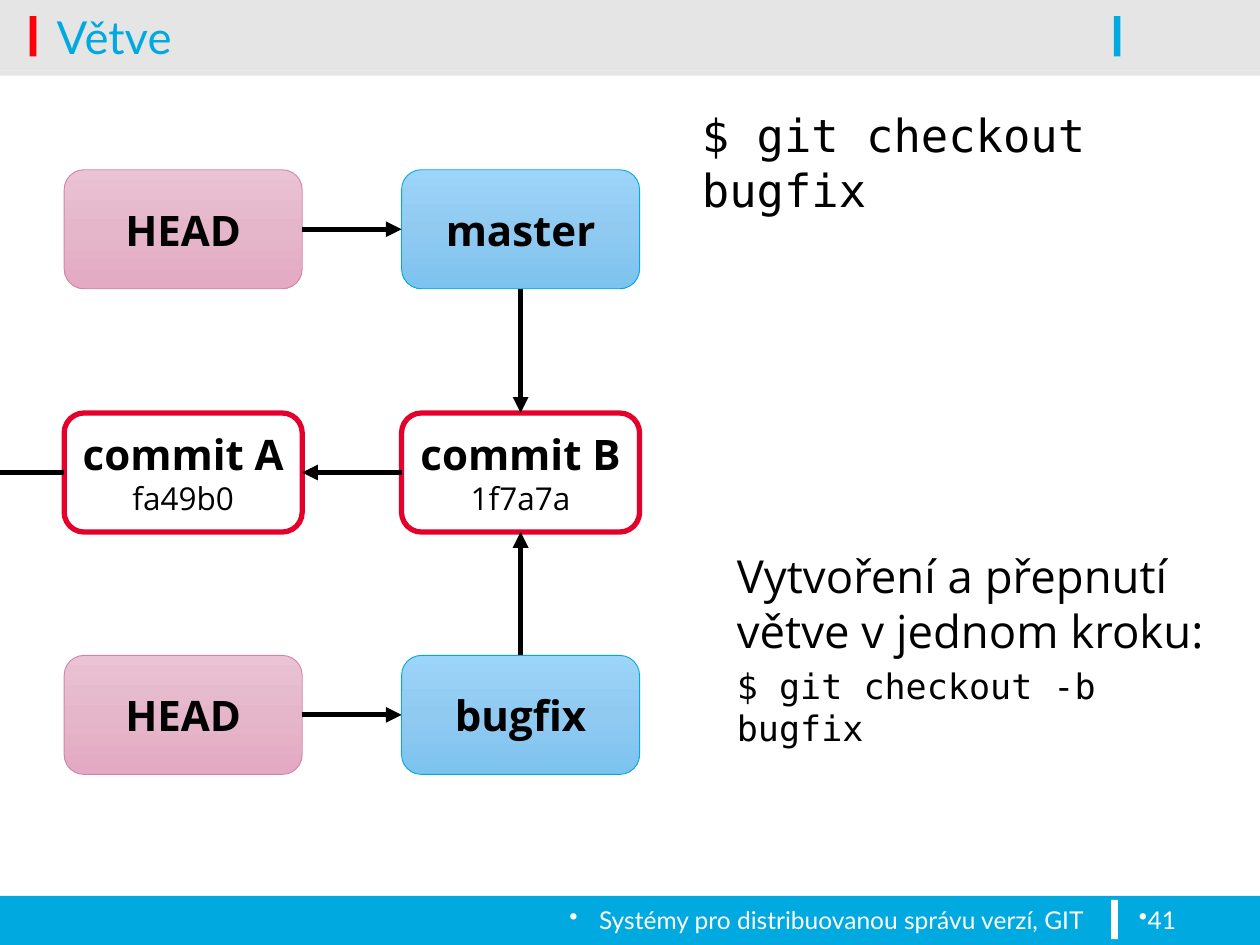
from copy import deepcopy
from lxml import etree
from pptx import Presentation
from pptx.dml.color import RGBColor
from pptx.enum.shapes import MSO_CONNECTOR, MSO_SHAPE
from pptx.enum.text import MSO_ANCHOR, PP_ALIGN
from pptx.oxml.ns import qn
from pptx.util import Pt

RECT, ROUND = MSO_SHAPE.RECTANGLE, MSO_SHAPE.ROUNDED_RECTANGLE
LINE = MSO_CONNECTOR.STRAIGHT
MID = MSO_ANCHOR.MIDDLE
LEFT, MIDDLE, RIGHT = PP_ALIGN.LEFT, PP_ALIGN.CENTER, PP_ALIGN.RIGHT
SANS, MONO, LATO = "Open Sans", "DejaVu Sans Mono", "Lato"
HEX = {"blue": "00A9E0", "grey": "E5E5E5", "red": "FE000C", "white": "FFFFFF",
       "black": "000000", "edge": "E4002B", "pink": "D582A9"}
FADE = {"blue": ("9DD4F9", "90CAF1", "7CC3EF"),
        "pink": ("EAC3D4", "E5B6CA", "E4AAC3")}
RGB = {name: RGBColor.from_string(code) for name, code in HEX.items()}


def style(font, face, size, color, bold=False):
    font.name, font.size, font.bold = face, Pt(size), bold
    font.color.rgb = RGB[color]


def block(kind, x, y, w, h):
    shape = slide.shapes.add_shape(kind, Pt(x), Pt(y), Pt(w), Pt(h))
    shape.shadow.inherit = False
    return shape


deck = Presentation()
deck.slide_width, deck.slide_height = Pt(720), Pt(540)
slide = deck.slides.add_slide(deck.slide_layouts[5])

bars = [(0, 512, 720, 28, "blue"), (0, 40.3, 720, 2.9, "grey"),
        (0, 0, 720, 40.3, "grey"), (17, 9.2, 3.8, 23, "red"),
        (635, 514.3, 3.8, 22.4, "white"), (636.5, 9.2, 3.8, 23, "blue")]
for x, y, w, h, color in bars:
    bar = block(RECT, x, y, w, h)
    bar.fill.solid()
    bar.fill.fore_color.rgb = RGB[color]
    bar.line.fill.background()

title = slide.shapes.title
title._element.getparent().append(title._element)
title.left, title.top, title.width, title.height = Pt(25.2), Pt(-8), Pt(606), Pt(57)
frame = title.text_frame
frame.text = "Větve"
frame.vertical_anchor = MID
frame.paragraphs[0].alignment = LEFT
style(frame.paragraphs[0].font, LATO, 26, "blue")

feet = [("Systémy pro distribuovanou správu verzí, GIT", 8.6, 618, RIGHT, 17),
        ("41", 643.7, 65, LEFT, 0)]
for text, x, w, side, hang in feet:
    box = slide.shapes.add_textbox(Pt(x), Pt(513.6), Pt(w), Pt(26))
    box.text_frame.word_wrap = True
    para = box.text_frame.paragraphs[0]
    para.text = text
    para.alignment = side
    props = para._p.get_or_add_pPr()
    props.set("marL", str(Pt(hang)))
    props.set("indent", str(-Pt(hang)))
    etree.SubElement(props, qn("a:buChar"), char="•")
    style(para.font, LATO, 14, "white")

WIDE, HIGH = 136, 68
COLS, ROWS = (36.7, 229.5), (97, 236, 374.5)
nodes = [("commit A", " fa49b0", 0, 1, "edge"), ("commit B", " 1f7a7a", 1, 1, "edge"),
         ("master", "", 1, 0, "blue"), ("bugfix", "", 1, 2, "blue"),
         ("HEAD", "", 0, 0, "pink"), ("HEAD", "", 0, 2, "pink")]
for name, code, col, row, color in nodes:
    node = block(ROUND, COLS[col], ROWS[row], WIDE, HIGH)
    node.line.color.rgb = RGB[color]
    node.line.width = Pt(3 if code else 0.5)
    if code:
        node.fill.solid()
        node.fill.fore_color.rgb = RGB["white"]
    else:
        node.fill.gradient()
        node.fill.gradient_angle = 270
        stops = node._element.spPr.find(qn("a:gradFill")).find(qn("a:gsLst"))
        stops.insert(1, deepcopy(stops[0]))
        for stop, place, shade in zip(node.fill.gradient_stops, (0, 0.5, 1), FADE[color]):
            stop.position = place
            stop.color.rgb = RGBColor.from_string(shade)
    frame = node.text_frame
    frame.word_wrap = True
    frame.vertical_anchor = MID
    para = frame.paragraphs[0]
    para.alignment = MIDDLE
    for text, size, bold in ((name, 24, True), (code, 18, False)):
        if text:
            run = para.add_run()
            run.text = text
            style(run.font, SANS, size, "black", bold)

GAP = COLS[1] - COLS[0] - WIDE
edge = COLS[0] + WIDE
axis = COLS[1] + WIDE / 2
top, mid, low = (y + HIGH / 2 for y in ROWS)
links = [(COLS[1], mid, edge, mid), (COLS[0], mid, COLS[0] - GAP, mid),
         (axis, ROWS[0] + HIGH, axis, ROWS[1]), (axis, ROWS[2], axis, ROWS[1] + HIGH),
         (edge, top, COLS[1], top), (edge, low, COLS[1], low)]
for ends in links:
    link = slide.shapes.add_connector(LINE, *(Pt(n) for n in ends))
    link.line.color.rgb = RGB["black"]
    link.line.width = Pt(3)
    etree.SubElement(link.line._get_or_add_ln(), qn("a:tailEnd"), type="triangle")
    etree.SubElement(link._element.spPr, qn("a:effectLst"))

notes = [(394, 57.6, 317, 39, [("$ git checkout bugfix", MONO, 26)]),
         (414, 309.6, 284.4, 99.4, [("Vytvoření a přepnutí\vvětve v jednom kroku:", SANS, 26),
                                  ("$ git checkout -b bugfix", MONO, 20)])]
for x, y, w, h, lines in notes:
    box = slide.shapes.add_textbox(Pt(x), Pt(y), Pt(w), Pt(h))
    frame = box.text_frame
    frame.word_wrap = True
    for i, (text, face, size) in enumerate(lines):
        para = frame.add_paragraph() if i else frame.paragraphs[0]
        para.text = text
        if i:
            para.space_before = Pt(4)
        style(para.font, face, size, "black")

deck.save("out.pptx")
